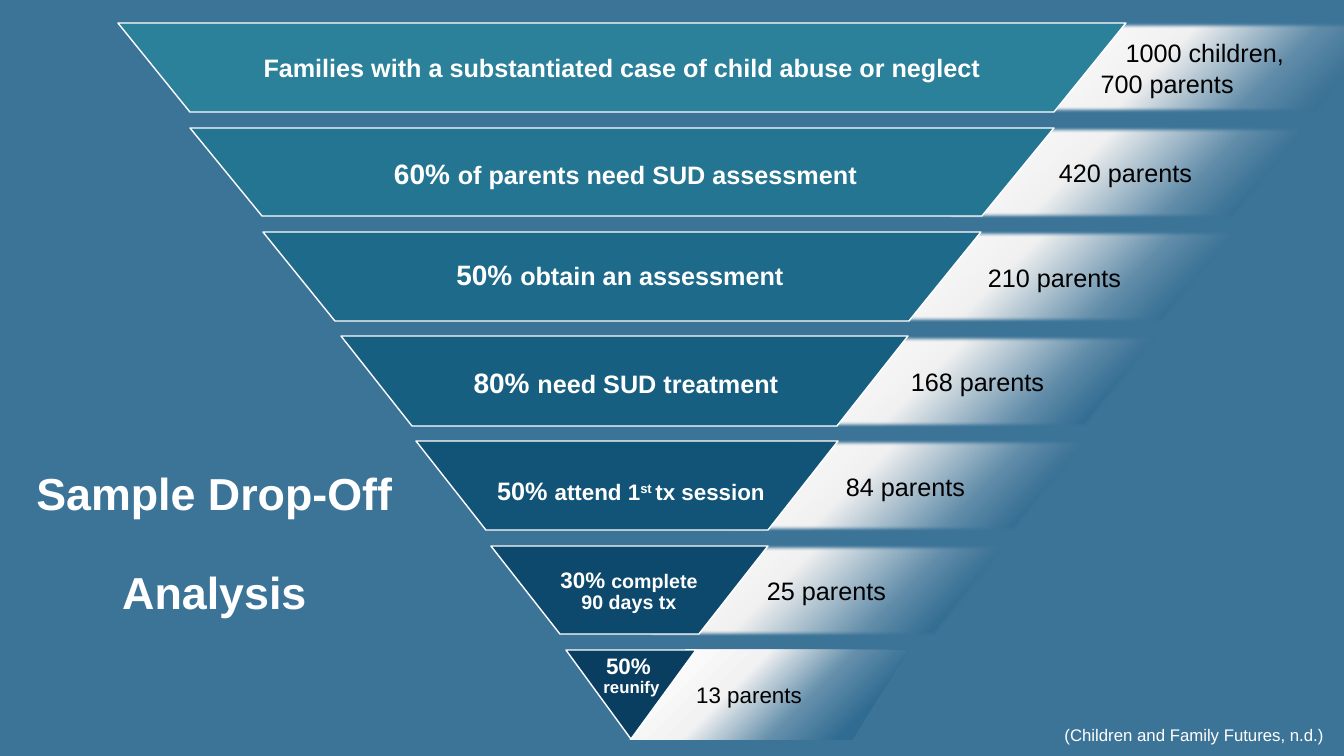
"""Builds the Sample Drop-Off Analysis funnel slide."""
import pptx
import pptx.dml.color
import pptx.enum.shapes
import pptx.enum.text
import pptx.oxml
import pptx.oxml.ns
import pptx.util

PX = 12192000 / 1344
ROW_TOP, ROW_PITCH, ROW_HEIGHT = 23, 104.5, 90

RGBColor = pptx.dml.color.RGBColor
Align = pptx.enum.text.PP_ALIGN
Anchor = pptx.enum.text.MSO_ANCHOR

BACKGROUND = RGBColor(0x3C, 0x74, 0x98)
BLUE = RGBColor(0x30, 0x6B, 0x91)
PALE_BLUE = RGBColor(0x64, 0x8F, 0xAB)
PALE_GREY = RGBColor(0xF2, 0xF2, 0xF2)
WHITE = RGBColor(0xFF, 0xFF, 0xFF)
BLACK = RGBColor(0x00, 0x00, 0x00)

# top left, top right, side inset, colour
FUNNEL = [
    (118, 1126, 72, RGBColor(0x2B, 0x80, 0x9A)),
    (190, 1054, 72, RGBColor(0x24, 0x75, 0x92)),
    (263, 981, 72, RGBColor(0x1D, 0x6A, 0x8A)),
    (341, 908, 71, RGBColor(0x17, 0x5F, 0x81)),
    (416, 838, 70, RGBColor(0x12, 0x54, 0x77)),
    (491, 768, 69, RGBColor(0x0D, 0x49, 0x6C)),
    (566, 696, 65, RGBColor(0x09, 0x3E, 0x61)),
]

BANDS = [
    ("1000 children, 700 parents", 1028, 363, 14, 35),
    ("420 parents", 944, 363, 15, 33),
    ("210 parents", 873, 363, 15, 33),
    ("168 parents", 796, 363, 17, 33),
    ("84 parents", 724, 363, 16, 33),
    ("25 parents", 645, 363, 17, 33),
    ("13 parents", 630, 278, 19, 38),
]

LABELS = [
    ((190, 24, 864, 90),
     [[("Families with a substantiated case of child abuse or neglect", 18)]]),
    ((270, 131, 711, 88), [[("60% ", 20), ("of parents need SUD assessment", 18)]]),
    ((332, 231, 576, 91), [[("50% ", 20), ("obtain an assessment", 18)]]),
    ((415, 341, 422, 86), [[("80% ", 20), ("need SUD treatment", 18)]]),
    ((267, 445, 728, 95),
     [[("50% ", 18), ("attend 1", 16), ("st ", 16, 30000), ("tx session", 16)]]),
    ((542, 549, 174, 85), [[("30% ", 16), ("complete 90 days tx", 14)]]),
    ((307, 650, 649, 56), [[("50% ", 16)], [("reunify", 12)]]),
]


def px(length):
    """Turn px into EMU."""
    return pptx.util.Emu(round(length * PX))


def row_top(row):
    """Return the top of a funnel row in px."""
    return ROW_TOP + ROW_PITCH * row


def style_font(font, size, color, bold=False):
    """Set the typeface, size, colour and weight of a font."""
    font.name = "Arial"
    font.size = pptx.util.Pt(size)
    font.color.rgb = color
    font.bold = bold


def add_text(slide, box, paragraphs, bold=True, align=Align.CENTER,
             anchor=Anchor.MIDDLE, line_spacing=0.9):
    """Add white text given as paragraphs of (text, size, baseline) runs."""
    text_frame = slide.shapes.add_textbox(*map(px, box)).text_frame
    text_frame.word_wrap = True
    text_frame.vertical_anchor = anchor
    for index, runs in enumerate(paragraphs):
        paragraph = text_frame.add_paragraph() if index else text_frame.paragraphs[0]
        paragraph.alignment = align
        paragraph.line_spacing = line_spacing
        for text, size, *baseline in runs:
            run = paragraph.add_run()
            run.text = text
            style_font(run.font, size, WHITE, bold)
            if baseline:
                run._r.get_or_add_rPr().set("baseline", str(baseline[0]))
    return text_frame


def set_gradient(shape, stops):
    """Fill a shape with a diagonal gradient of (percent, colour) stops."""
    shape.fill.gradient()
    shape.fill.gradient_angle = 135
    stop_list = shape._element.spPr.find(".//" + pptx.oxml.ns.qn("a:gsLst"))
    for stop in list(stop_list):
        stop_list.remove(stop)
    for percent, color in stops:
        stop_list.append(pptx.oxml.parse_xml(
            f'<a:gs {pptx.oxml.ns.nsdecls("a")} pos="{percent * 1000}">'
            f'<a:srgbClr val="{color}"/></a:gs>'))


def soften_edges(shape):
    """Give a shape a narrow soft edge."""
    effects = shape._element.spPr.find(pptx.oxml.ns.qn("a:effectLst"))
    effects.append(pptx.oxml.parse_xml(
        f'<a:softEdge {pptx.oxml.ns.nsdecls("a")} rad="31750"/>'))


def add_band(slide, row, text, left, width, blue_stop, pale_stop):
    """Add the fading band with the count beside a funnel row."""
    shape = slide.shapes.add_shape(
        pptx.enum.shapes.MSO_SHAPE.FLOWCHART_DATA,
        px(left), px(row_top(row)), px(width), px(ROW_HEIGHT))
    shape.shadow.inherit = False
    shape.line.fill.background()
    set_gradient(shape, [(blue_stop, BLUE), (pale_stop, PALE_BLUE),
                         (62, PALE_GREY), (93, WHITE)])
    first, last = row == 0, row == len(BANDS) - 1
    if not last:
        soften_edges(shape)
    text_frame = shape.text_frame
    text_frame.text = text
    text_frame.word_wrap = True
    text_frame.vertical_anchor = Anchor.MIDDLE
    paragraph = text_frame.paragraphs[0]
    paragraph.alignment = Align.LEFT if first else Align.CENTER
    if first or last:
        text_frame.margin_left = 0
    if first:
        paragraph._p.get_or_add_pPr().set("indent", str(px(25)))
    if last:
        text_frame.margin_right = px(40)
    style_font(paragraph.runs[0].font, 16 if last else 18, BLACK)


def add_funnel_row(slide, row, left, right, inset, color):
    """Add one slice of the funnel."""
    top = row_top(row)
    bottom = top + ROW_HEIGHT - 1
    builder = slide.shapes.build_freeform(right, top, scale=PX)
    builder.add_line_segments(
        [(right - inset, bottom), (left + inset, bottom), (left, top)], close=True)
    shape = builder.convert_to_shape()
    shape.shadow.inherit = False
    shape.fill.solid()
    shape.fill.fore_color.rgb = color
    shape.line.color.rgb = WHITE
    shape.line.width = pptx.util.Pt(1)


def main():
    """Build and save the slide."""
    presentation = pptx.Presentation()
    presentation.slide_width, presentation.slide_height = px(1344), px(756)
    slide = presentation.slides.add_slide(presentation.slide_layouts[6])
    slide.background.fill.solid()
    slide.background.fill.fore_color.rgb = BACKGROUND

    for row, band in enumerate(BANDS):
        add_band(slide, row, *band)
    title = add_text(slide, (20, 419, 389, 253),
                     [[("Sample Drop-Off", 32)], [("Analysis", 32)]])
    title.paragraphs[1].space_before = pptx.util.Pt(36)
    for row, funnel_row in enumerate(FUNNEL):
        add_funnel_row(slide, row, *funnel_row)
    for box, paragraphs in LABELS:
        anchor = Anchor.TOP if len(paragraphs) > 1 else Anchor.MIDDLE
        add_text(slide, box, paragraphs, anchor=anchor)
    citation = add_text(slide, (871, 715, 453, 40),
                        [[("(Children and Family Futures, n.d.)", 12)]],
                        bold=False, align=Align.RIGHT, line_spacing=1.0)
    citation.margin_right = 0

    presentation.save("out.pptx")


if __name__ == "__main__":
    main()
